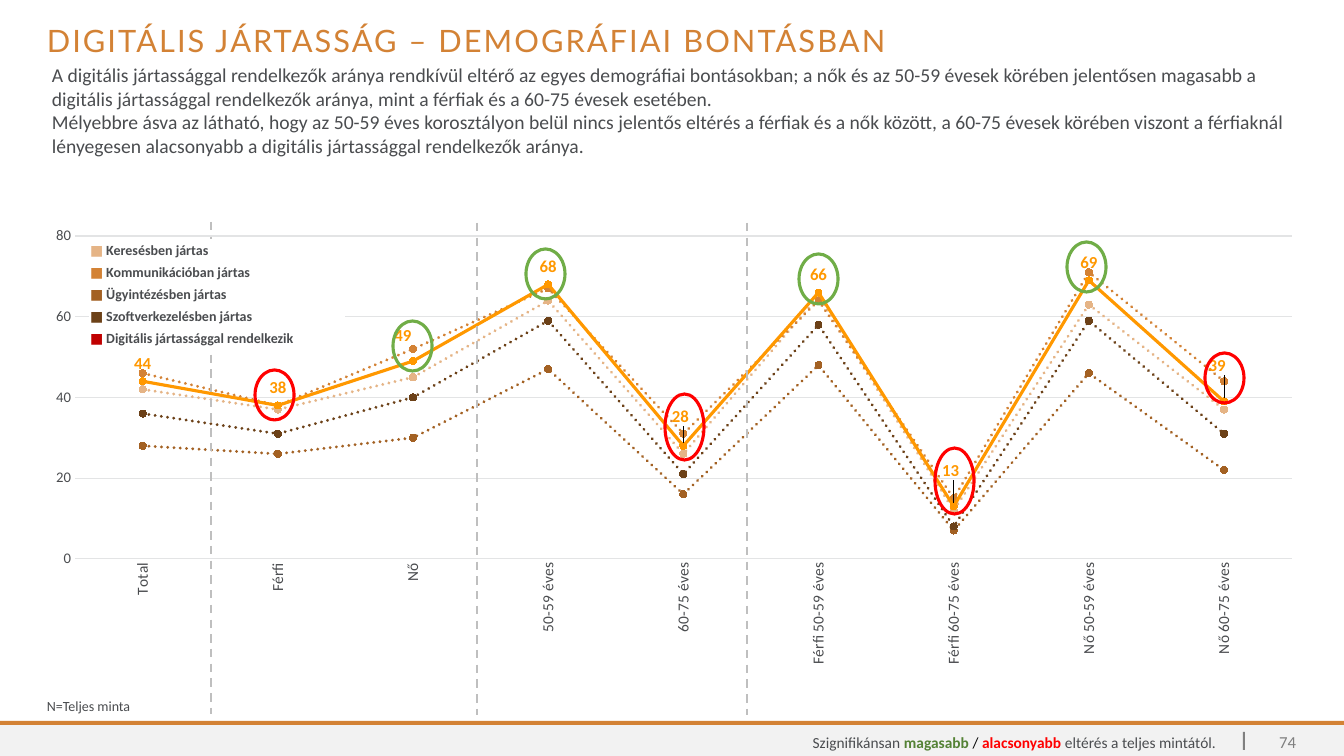
from lxml import etree
from pptx import Presentation
from pptx.chart.data import CategoryChartData
from pptx.dml.color import RGBColor
from pptx.enum.chart import XL_CHART_TYPE, XL_LABEL_POSITION, XL_MARKER_STYLE, XL_TICK_MARK
from pptx.enum.dml import MSO_LINE
from pptx.enum.shapes import MSO_CONNECTOR, MSO_SHAPE
from pptx.enum.text import MSO_ANCHOR, PP_ALIGN
from pptx.oxml.ns import qn
from pptx.util import Pt

LINE_CHART = XL_CHART_TYPE.LINE_MARKERS
ABOVE = XL_LABEL_POSITION.ABOVE
CIRCLE = XL_MARKER_STYLE.CIRCLE
NO_TICK = XL_TICK_MARK.NONE
DASH, DOT = MSO_LINE.DASH, MSO_LINE.ROUND_DOT
STRAIGHT = MSO_CONNECTOR.STRAIGHT
RECT, OVAL = MSO_SHAPE.RECTANGLE, MSO_SHAPE.OVAL
TOP, MIDDLE = MSO_ANCHOR.TOP, MSO_ANCHOR.MIDDLE
LEFT, RIGHT = PP_ALIGN.LEFT, PP_ALIGN.RIGHT

EMU_PER_PX = 914400 / 100.8
COLORS = {
    "text": "4A4C4F", "orange": "D38235", "footer": "F2F2F2", "page": "808080",
    "grid": "E3E4E5", "divider": "BFBFBF", "white": "FFFFFF", "black": "000000",
    "search": "E5B486", "admin": "A36123", "software": "6C4118",
    "digital": "FF9800", "digital_key": "C00000",
    "higher": "70AD47", "higher_text": "548235", "lower": "FF0000",
}

TITLE = "DIGITÁLIS JÁRTASSÁG – DEMOGRÁFIAI BONTÁSBAN"
SUMMARY = [
    "A digitális jártassággal rendelkezők aránya rendkívül eltérő az egyes demográfiai "
    "bontásokban; a nők és az 50-59 évesek körében jelentősen magasabb a digitális "
    "jártassággal rendelkezők aránya, mint a férfiak és a 60-75 évesek esetében.",
    "Mélyebbre ásva az látható, hogy az 50-59 éves korosztályon belül nincs jelentős "
    "eltérés a férfiak és a nők között, a 60-75 évesek körében viszont a férfiaknál "
    "lényegesen alacsonyabb a digitális jártassággal rendelkezők aránya.",
]
SAMPLE = "N=Teljes minta"
PAGE = "74"
SIGNIFICANCE = [
    ("Szignifikánsan ", "text", False), ("magasabb ", "higher_text", True),
    ("/ ", "black", False), ("alacsonyabb ", "lower", True),
    ("eltérés a teljes mintától.", "text", False),
]
GROUPS = ["Total", "Férfi", "Nő", "50-59 éves", "60-75 éves", "Férfi 50-59 éves",
          "Férfi 60-75 éves", "Nő 50-59 éves", "Nő 60-75 éves"]
SKILLS = [
    ("Keresésben jártas", "search", "search", [42, 37, 45, 64, 26, 65, 12, 63, 37]),
    ("Kommunikációban jártas", "orange", "orange", [46, 38, 52, 67, 31, 64, 15, 71, 44]),
    ("Ügyintézésben jártas", "admin", "admin", [28, 26, 30, 47, 16, 48, 7, 46, 22]),
    ("Szoftverkezelésben jártas", "software", "software", [36, 31, 40, 59, 21, 58, 8, 59, 31]),
    ("Digitális jártassággal rendelkezik", "digital", "digital_key",
     [44, 38, 49, 68, 28, 66, 13, 69, 39]),
]
CHART_BOX = (37, 220, 1270, 502)
PLOT = {"x": 0.03, "y": 0.032, "w": 0.958, "h": 0.643}
LABEL_SHIFTS = {2: (-10, -8), 4: (-3, -12), 6: (-3, -18), 8: (-7, -18)}
DIVIDERS = [(211, 222), (477, 223), (747, 223)]
DIVIDER_HEIGHT = 492
RING_WIDTH = 39
RINGS = [(393, 321, 50, "higher"), (255, 370, 50, "lower"), (526, 249, 50, "higher"),
         (665, 394, 66, "lower"), (799, 254, 50, "higher"), (1067, 242, 50, "higher"),
         (935, 448, 66, "lower"), (1205, 353, 50, "lower")]
BARS = [((0, 725, 1344, 31), "footer"), ((0, 721, 1344, 4), "orange"),
        ((1243, 732, 2, 18), "page")]
LEGEND_BOX = (90, 240, 254)
LEGEND_ROW = 22


def px(*lengths):
    return [round(n * EMU_PER_PX) for n in lengths]


def rgb(name):
    return RGBColor.from_string(COLORS[name])


def set_font(font, size, color, bold=False, face="Calibri"):
    font.size, font.bold, font.name = Pt(size), bold, face
    font.color.rgb = rgb(color)


def write(frame, paragraphs, size=11, face="Calibri", align=LEFT, anchor=TOP,
          spacing=None, tracking=None):
    frame.word_wrap = True
    frame.vertical_anchor = anchor
    for i, runs in enumerate(paragraphs):
        para = frame.paragraphs[0] if i == 0 else frame.add_paragraph()
        para.alignment = align
        if spacing:
            para.line_spacing = spacing
        for words, color, bold in runs:
            run = para.add_run()
            run.text = words
            set_font(run.font, size, color, bold, face)
            if tracking:
                run.font._element.set("spc", str(tracking))


def add_text(slide, box, paragraphs, **style):
    write(slide.shapes.add_textbox(*px(*box)).text_frame, paragraphs, **style)


def manual_layout(fractions, inner=False):
    layout = etree.Element(qn("c:layout"))
    manual = etree.SubElement(layout, qn("c:manualLayout"))
    if inner:
        etree.SubElement(manual, qn("c:layoutTarget"), val="inner")
        for key in "xy":
            etree.SubElement(manual, qn(f"c:{key}Mode"), val="edge")
    for key, value in fractions.items():
        etree.SubElement(manual, qn(f"c:{key}"), val=f"{value:.4f}")
    return layout


def add_skill_chart(slide):
    data = CategoryChartData(number_format="0")
    data.categories = GROUPS
    for name, _, _, shares in SKILLS:
        data.add_series(name, shares)
    chart = slide.shapes.add_chart(LINE_CHART, *px(*CHART_BOX), data).chart
    chart.has_legend = chart.has_title = False
    set_font(chart.font, 10, "text")

    plot_area = chart._chartSpace.chart.plotArea
    for old in plot_area.findall(qn("c:layout")):
        plot_area.remove(old)
    plot_area.insert(0, manual_layout(PLOT, inner=True))

    groups, shares = chart.category_axis, chart.value_axis
    for axis, size in ((groups, 11), (shares, 10.5)):
        axis.major_tick_mark = axis.minor_tick_mark = NO_TICK
        set_font(axis.tick_labels.font, size, "text")
    groups._element.find(qn("c:txPr")).find(qn("a:bodyPr")).set("rot", "-5400000")
    shares.minimum_scale, shares.maximum_scale, shares.major_unit = 0, 80, 20
    shares.tick_labels.number_format = "0"
    shares.tick_labels.number_format_is_linked = False
    shares.format.line.fill.background()
    for line in (groups.format.line, shares.major_gridlines.format.line):
        line.color.rgb, line.width = rgb("grid"), Pt(0.75)

    chart.plots[0].vary_by_categories = False
    for series, (_, color, _, _) in zip(chart.plots[0].series, SKILLS):
        series.smooth = False
        line = series.format.line
        line.color.rgb, line.width = rgb(color), Pt(2.25)
        line._get_or_add_ln().set("cap", "rnd")
        if color != "digital":
            line.dash_style = DOT
        series.marker.style, series.marker.size = CIRCLE, 5
        series.marker.format.fill.solid()
        series.marker.format.fill.fore_color.rgb = rgb(color)
        series.marker.format.line.color.rgb = rgb(color)

    digital = chart.plots[0].series[len(SKILLS) - 1]
    labels = digital.data_labels
    labels.show_value, labels.position = True, ABOVE
    labels.number_format, labels.number_format_is_linked = "0", False
    set_font(labels.font, 12, "digital", True)
    for index, (dx, dy) in LABEL_SHIFTS.items():
        label = digital.points[index].data_label
        set_font(label.font, 12, "digital", True)
        label.position = ABOVE
        shift = {"x": dx / CHART_BOX[2], "y": dy / CHART_BOX[3]}
        label._dLbl.find(qn("c:idx")).addnext(manual_layout(shift))


def add_legend(slide):
    box = (*LEGEND_BOX, LEGEND_ROW * len(SKILLS))
    table = slide.shapes.add_table(len(SKILLS), 1, *px(*box)).table
    table.first_row = table.horz_banding = False
    for row, (name, _, key, _) in enumerate(SKILLS):
        cell = table.cell(row, 0)
        cell.margin_left = cell.margin_right = cell.margin_top = cell.margin_bottom = 0
        cell.fill.solid()
        cell.fill.fore_color.rgb = rgb("white")
        write(cell.text_frame, [[("■", key, True), (" " + name, "text", True)]], size=10)
        cell.vertical_anchor = MIDDLE


def main():
    deck = Presentation()
    deck.slide_width, deck.slide_height = px(1344, 756)
    slide = deck.slides.add_slide(deck.slide_layouts[6])
    for box, color in BARS:
        bar = slide.shapes.add_shape(RECT, *px(*box))
        bar.shadow.inherit = False
        bar.fill.solid()
        bar.fill.fore_color.rgb = rgb(color)
        bar.line.fill.background()

    add_skill_chart(slide)
    add_text(slide, (37, 21, 1270, 46), [[(TITLE, "orange", False)]],
             size=22, face="Lato", spacing=0.9, tracking=150)
    add_text(slide, (1259, 733, 47, 18), [[(PAGE, "page", False)]],
             size=12, align=RIGHT, anchor=MIDDLE)
    add_text(slide, (42, 58, 1260, 111), [[(words, "text", False)] for words in SUMMARY], size=14)
    for x, top in DIVIDERS:
        divider = slide.shapes.add_connector(STRAIGHT, *px(x, top, x, top + DIVIDER_HEIGHT))
        divider.line.color.rgb, divider.line.width = rgb("divider"), Pt(1.5)
        divider.line.dash_style = DASH
        etree.SubElement(divider._element.spPr, qn("a:effectLst"))
    add_text(slide, (458, 733, 768, 18), [SIGNIFICANCE], align=RIGHT, anchor=MIDDLE)
    for x, y, height, color in RINGS:
        ring = slide.shapes.add_shape(OVAL, *px(x, y, RING_WIDTH, height))
        ring.shadow.inherit = False
        ring.fill.background()
        ring.line.color.rgb, ring.line.width = rgb(color), Pt(2.25)
    add_legend(slide)
    add_text(slide, (37, 693, 281, 28), [[(SAMPLE, "text", False)]], size=10)
    deck.save("out.pptx")


if __name__ == "__main__":
    main()
